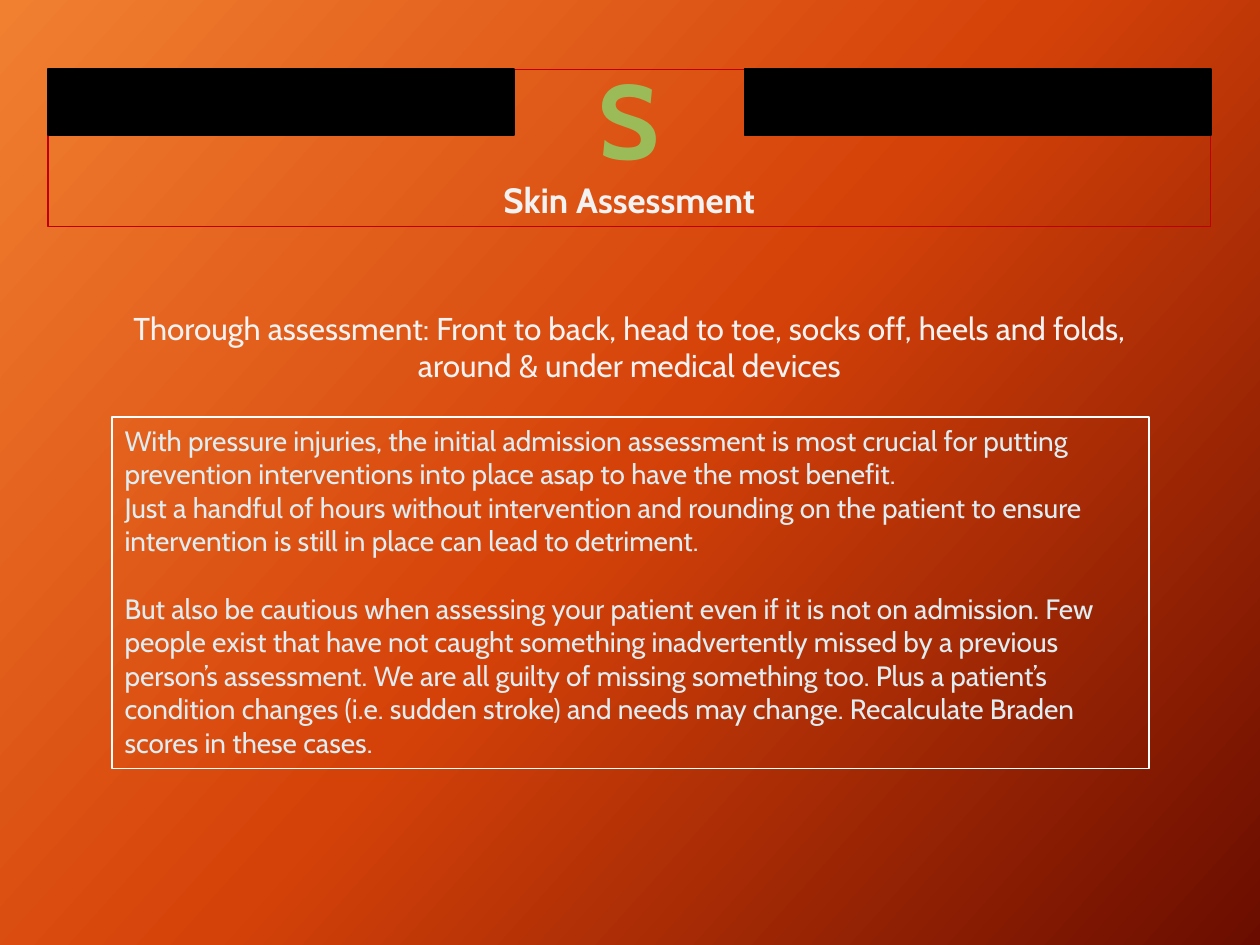
import copy
from dataclasses import dataclass
from typing import Optional

import pptx
import pptx.dml.color
import pptx.enum.shapes
import pptx.enum.text
import pptx.oxml.ns
import pptx.util

Inches = pptx.util.Inches
Pt = pptx.util.Pt
CENTER = pptx.enum.text.PP_ALIGN.CENTER
LEFT = pptx.enum.text.PP_ALIGN.LEFT


@dataclass
class Box:
    left: float
    top: float
    width: float
    height: float


@dataclass
class Passage:
    box: Box
    paragraphs: list[str]
    size: float
    color: str
    bold: bool = False
    align: pptx.enum.text.PP_ALIGN = CENTER
    anchor: pptx.enum.text.MSO_ANCHOR = pptx.enum.text.MSO_ANCHOR.TOP
    gap: float = 0
    outline: Optional[str] = None


BACKGROUND_STOPS = [(0, "F18031"), (0.5, "D54209"), (1, "6A0D00")]
HEADER = Box(0.38, 0.55, 9.23, 1.25)
BAR_WIDTH, BAR_HEIGHT = 3.7, 0.52

HEADING = Passage(
    HEADER, ["Skin Assessment"], 20, "F2F2F2", bold=True,
    anchor=pptx.enum.text.MSO_ANCHOR.BOTTOM, outline="C00000",
)
PASSAGES = [
    Passage(Box(4.6, 0.38, 0.79, 1.11), ["S"], 60, "9BBB59", bold=True),
    Passage(
        Box(0.89, 3.31, 8.23, 2.79),
        [
            "With pressure injuries, the initial admission assessment is most crucial "
            "for putting prevention interventions into place asap to have the most benefit.\n"
            "Just a handful of hours without intervention and rounding on the patient "
            "to ensure intervention is still in place can lead to detriment.",
            "But also be cautious when assessing your patient even if it is not on "
            "admission. Few people exist that have not caught something inadvertently "
            "missed by a previous person’s assessment. We are all guilty of missing "
            "something too. Plus a patient’s condition changes (i.e. sudden stroke) and "
            "needs may change. Recalculate Braden scores in these cases.",
        ],
        16, "DEEDF2", align=LEFT, gap=19.2, outline="FFFFFF",
    ),
    Passage(
        Box(0.74, 2.4, 8.51, 0.71),
        ["Thorough assessment: Front to back, head to toe, socks off, heels and folds, "
         "around & under medical devices"],
        18, "F2F2F2",
    ),
]


def rgb(value: str) -> pptx.dml.color.RGBColor:
    return pptx.dml.color.RGBColor.from_string(value)


def place(box: Box) -> list[int]:
    return [Inches(length) for length in (box.left, box.top, box.width, box.height)]


def paint_background(slide: pptx.slide.Slide) -> None:
    fill = slide.background.fill
    fill.gradient()
    fill.gradient_angle = 360 - 42
    stop_list = slide.element.find(".//" + pptx.oxml.ns.qn("a:gsLst"))
    stop_list.append(copy.deepcopy(stop_list[-1]))
    for stop, (position, color) in zip(fill.gradient_stops, BACKGROUND_STOPS):
        stop.position = position
        stop.color.rgb = rgb(color)


def write(shape: pptx.shapes.autoshape.Shape, passage: Passage) -> None:
    frame = shape.text_frame
    frame.word_wrap = True
    frame.auto_size = pptx.enum.text.MSO_AUTO_SIZE.NONE
    frame.vertical_anchor = passage.anchor
    for index, wording in enumerate(passage.paragraphs):
        paragraph = frame.add_paragraph() if index else frame.paragraphs[0]
        paragraph.text = wording
        paragraph.alignment = passage.align
        if index:
            paragraph.space_before = Pt(passage.gap)
        for run in paragraph.runs:
            run.font.name = "Cabin"
            run.font.size = Pt(passage.size)
            run.font.bold = passage.bold
            run.font.color.rgb = rgb(passage.color)
    if passage.outline:
        shape.line.color.rgb = rgb(passage.outline)
        shape.line.width = Pt(0.75)


def add_bar(slide: pptx.slide.Slide, box: Box) -> None:
    bar = slide.shapes.add_shape(pptx.enum.shapes.MSO_SHAPE.RECTANGLE, *place(box))
    bar.shadow.inherit = False
    bar.fill.solid()
    bar.fill.fore_color.rgb = rgb("000000")
    bar.line.color.rgb = rgb("000000")
    bar.line.width = Pt(1)


def main() -> None:
    deck = pptx.Presentation()
    deck.slide_width, deck.slide_height = Inches(10), Inches(7.5)
    slide = deck.slides.add_slide(deck.slide_layouts[5])
    paint_background(slide)

    heading = slide.shapes.title
    heading.left, heading.top, heading.width, heading.height = place(HEADING.box)
    write(heading, HEADING)
    for passage in PASSAGES:
        write(slide.shapes.add_textbox(*place(passage.box)), passage)
    for left in (HEADER.left, HEADER.left + HEADER.width - BAR_WIDTH):
        add_bar(slide, Box(left, HEADER.top, BAR_WIDTH, BAR_HEIGHT))

    deck.save("out.pptx")


if __name__ == "__main__":
    main()
